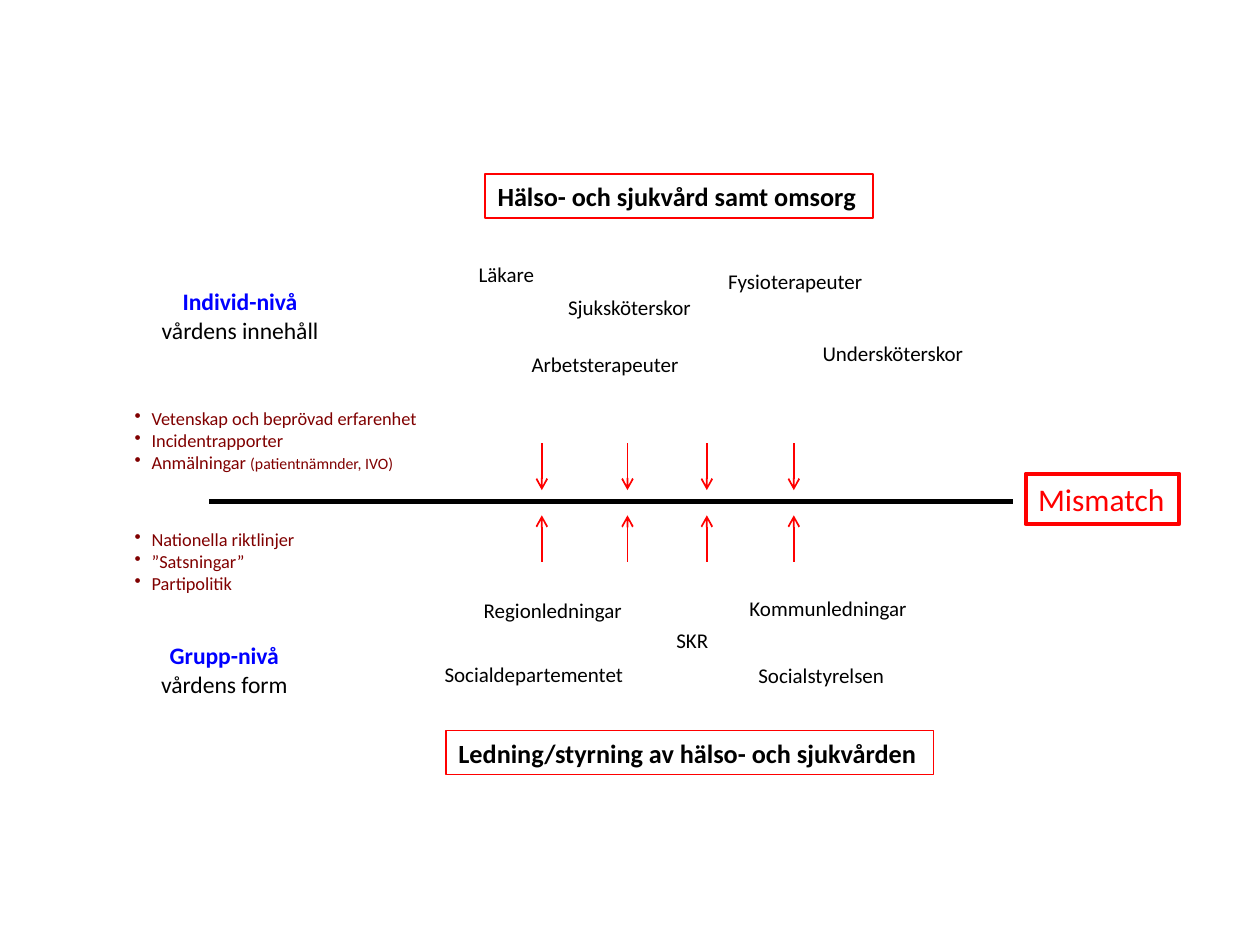
import pptx
import pptx.util
import pptx.dml.color
import pptx.enum.shapes
import pptx.enum.text
import lxml.etree

presentation = pptx.Presentation()
presentation.slide_width = pptx.util.Inches(10)
presentation.slide_height = pptx.util.Inches(7.5)
slide = presentation.slides.add_slide(presentation.slide_layouts[6])

# The slide is a grid of 100 columns by 75 rows of square cells.
CELL = presentation.slide_width // 100
BLACK, RED, BLUE, MAROON = "000000", "FF0000", "0000FF", "800000"
ALIGN = pptx.enum.text.PP_ALIGN


def color(hex_string):
    return pptx.dml.color.RGBColor.from_string(hex_string)


def add_text(grid_box, lines, size, hex_string, border=None, bold=False, align=ALIGN.LEFT):
    """Add a text box, or a bordered rectangle when border gives a line width."""
    bounds = [round(value * CELL) for value in grid_box]
    if border:
        shape = slide.shapes.add_shape(pptx.enum.shapes.MSO_SHAPE.RECTANGLE, *bounds)
        shape.shadow.inherit = False
        shape.fill.background()
        shape.line.color.rgb = color(RED)
        shape.line.width = pptx.util.Pt(border)
    else:
        shape = slide.shapes.add_textbox(*bounds)
    text_frame = shape.text_frame
    text_frame.text = "\n".join(lines)
    text_frame.word_wrap = False
    text_frame.auto_size = pptx.enum.text.MSO_AUTO_SIZE.SHAPE_TO_FIT_TEXT
    for paragraph in text_frame.paragraphs:
        paragraph.alignment = align
        for run in paragraph.runs:
            run.font.name = "Calibri"
            run.font.size = pptx.util.Pt(size)
            run.font.bold = bold
            run.font.color.rgb = color(hex_string)
    return text_frame


# Framed headings
add_text((38.5, 13.8, 30.8, 3.5), ["Hälso- och sjukvård samt omsorg"], 15, BLACK, 0.75, True)
add_text((35.4, 58, 38.7, 3.5), ["Ledning/styrning av hälso- och sjukvården"], 15, BLACK, 0.75, True)
add_text((81.4, 37.6, 12.2, 4), ["Mismatch"], 18, RED, 2.25)

# Professions above the divider, governing bodies below it
actors = [
    ("Läkare", 37, 20.3, 6.5),
    ("Fysioterapeuter", 56.8, 20.8, 12.8),
    ("Sjuksköterskor", 44.1, 22.9, 11.9),
    ("Undersköterskor", 64.3, 26.5, 13.3),
    ("Arbetsterapeuter", 41.2, 27.4, 13.8),
    ("Regionledningar", 37.4, 46.9, 13.1),
    ("Kommunledningar", 58.5, 46.8, 15.4),
    ("SKR", 52.7, 49.3, 4.6),
    ("Socialdepartementet", 34.3, 52, 16.3),
    ("Socialstyrelsen", 59.2, 52.1, 12.1),
]
for name, column, row, width in actors:
    add_text((column, row, width, 3), [name], 12, BLACK)

# Level names
levels = [
    ("Individ-nivå", "vårdens innehåll", 22.3, 14.7),
    ("Grupp-nivå", "vårdens form", 50.4, 12.2),
]
for level, subject, row, width in levels:
    text_frame = add_text((11.7, row, width, 5.6), [level, subject], 13.5, BLACK, align=ALIGN.CENTER)
    level_font = text_frame.paragraphs[0].runs[0].font
    level_font.bold = True
    level_font.color.rgb = color(BLUE)

# Bulleted lists
bullet_lists = [
    (31.8, 25.3, ["Vetenskap och beprövad erfarenhet", "Incidentrapporter", "Anmälningar "]),
    (41.4, 14.9, ["Nationella riktlinjer", "”Satsningar”", "Partipolitik"]),
]
for row, width, items in bullet_lists:
    text_frame = add_text((9.7, row, width, 6.3), items, 10.5, MAROON)
    for paragraph in text_frame.paragraphs:
        properties = paragraph._p.get_or_add_pPr()
        indent = round(1.35 * CELL)
        properties.set("marL", str(indent))
        properties.set("indent", str(-indent))
        bullet = lxml.etree.SubElement(properties, pptx.oxml.ns.qn("a:buChar"))
        bullet.set("char", "•")
    if items[-1] == "Anmälningar ":
        run = text_frame.paragraphs[-1].add_run()
        run.text = "(patientnämnder, IVO)"
        run.font.name = "Calibri"
        run.font.size = pptx.util.Pt(9)
        run.font.color.rgb = color(MAROON)

# Divider, and arrows that meet it from both sides
lines = [(16.6, 39.8, 80.4, 39.8, BLACK, 3)]
for column in (43, 49.8, 56.1, 63):
    lines.append((column, 35.2, column, 38.9, RED, 1))
    lines.append((column, 44.6, column, 40.9, RED, 1))
for *ends, hex_string, width in lines:
    connector = slide.shapes.add_connector(
        pptx.enum.shapes.MSO_CONNECTOR.STRAIGHT, *[round(value * CELL) for value in ends])
    connector.line.color.rgb = color(hex_string)
    connector.line.width = pptx.util.Pt(width)
    if hex_string == RED:
        arrowhead = lxml.etree.SubElement(connector.line._get_or_add_ln(), pptx.oxml.ns.qn("a:tailEnd"))
        arrowhead.set("type", "arrow")
    lxml.etree.SubElement(connector._element.spPr, pptx.oxml.ns.qn("a:effectLst"))

presentation.save("out.pptx")
